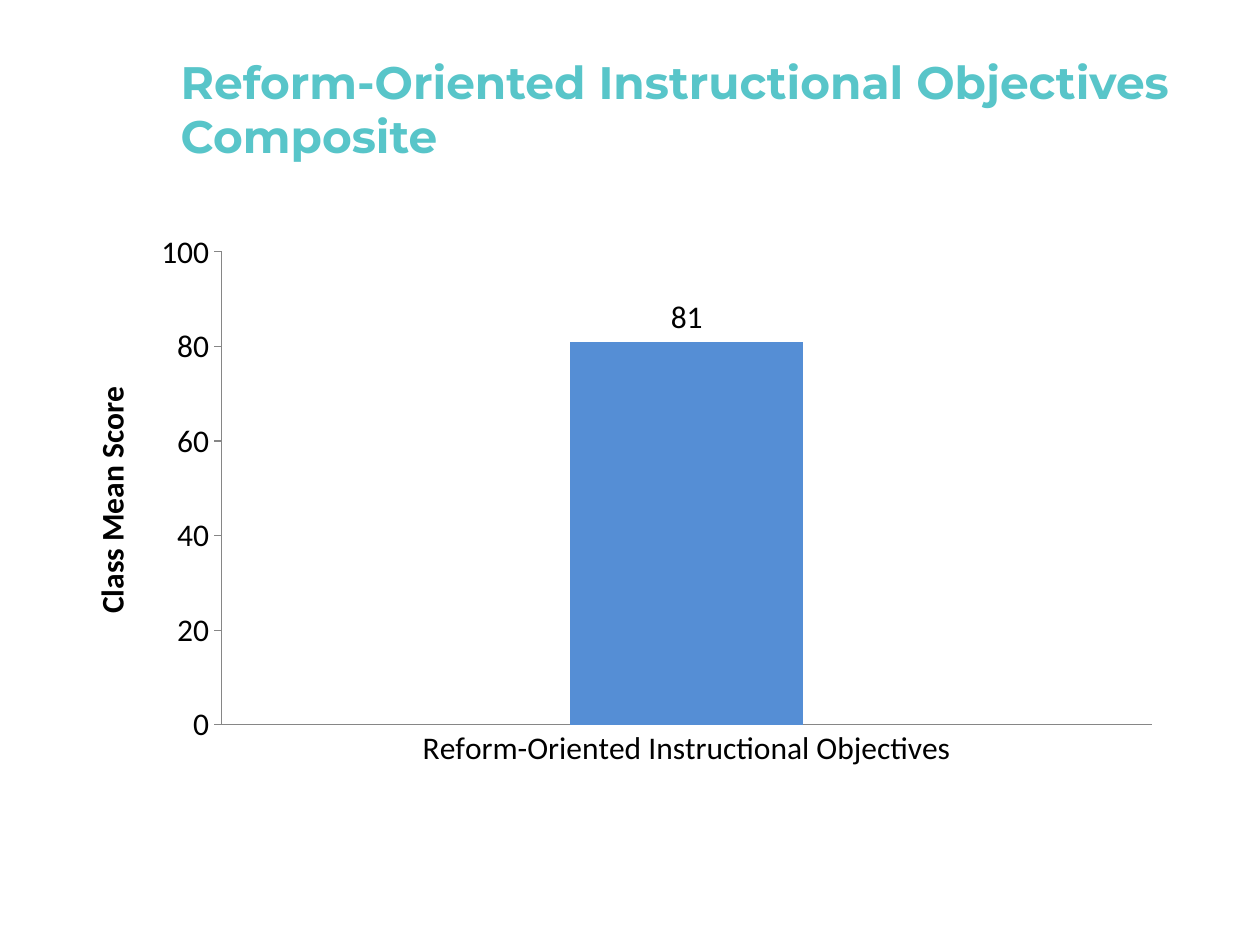
from lxml import etree
from pptx import Presentation
from pptx.chart.data import CategoryChartData
from pptx.dml.color import RGBColor
from pptx.enum import chart as ch, text as tx
from pptx.oxml import ns
from pptx.util import Pt


def paint(part, color):
    part.solid()
    part.fore_color.rgb = RGBColor.from_string(color)


def style(font, name, size, color, bold=False):
    font.name, font.size, font.bold = name, Pt(size), bold
    paint(font.fill, color)


def add_title(slide, x, y, w, h):
    title = slide.shapes.title
    title.left, title.top, title.width, title.height = map(Pt, (x, y, w, h))
    frame = title.text_frame
    frame.word_wrap = True
    frame.auto_size = tx.MSO_AUTO_SIZE.NONE
    frame.vertical_anchor = tx.MSO_ANCHOR.MIDDLE
    para = frame.paragraphs[0]
    para.alignment = tx.PP_ALIGN.LEFT
    run = para.add_run()
    run.text = "Reform-Oriented Instructional Objectives Composite"
    style(run.font, "Montserrat", 26, "58C5C9", True)


def set_plot(chart, x, y, w, h):
    area = chart._chartSpace.chart.plotArea
    for old in area.findall(ns.qn("c:layout")):
        area.remove(old)
    layout = etree.Element(ns.qn("c:layout"))
    area.insert(0, layout)
    manual = etree.SubElement(layout, ns.qn("c:manualLayout"))
    parts = {"layoutTarget": "inner", "xMode": "edge", "yMode": "edge",
             "x": x, "y": y, "w": w, "h": h}
    for tag, val in parts.items():
        etree.SubElement(manual, ns.qn("c:" + tag)).set("val", str(val))


def add_chart(slide, x, y, w, h):
    data = CategoryChartData(number_format="0")
    data.categories = ["Reform-Oriented Instructional Objectives"]
    data.add_series("Series 1", [81])
    chart = slide.shapes.add_chart(
        ch.XL_CHART_TYPE.COLUMN_CLUSTERED, *map(Pt, (x, y, w, h)), data).chart
    chart.has_legend = chart.has_title = False
    style(chart.font, "Calibri", 18, "000000")
    set_plot(chart, 0.126, 0.055, 0.852, 0.829)

    plot = chart.plots[0]
    plot.gap_width = 300
    plot.vary_by_categories = False
    bars = plot.series[0]
    paint(bars.format.fill, "558ED5")
    labels = bars.data_labels
    labels.show_value = True
    labels.position = ch.XL_LABEL_POSITION.OUTSIDE_END
    style(labels.font, "Calibri", 18, "000000")

    score, group = chart.value_axis, chart.category_axis
    for axis in (score, group):
        axis.has_major_gridlines = False
        axis.minor_tick_mark = ch.XL_TICK_MARK.NONE
        paint(axis.format.line.fill, "868686")
        axis.format.line.width = Pt(0.75)
        style(axis.tick_labels.font, "Calibri", 18, "000000")
    group.major_tick_mark = ch.XL_TICK_MARK.NONE
    score.major_tick_mark = ch.XL_TICK_MARK.OUTSIDE
    score.minimum_scale, score.maximum_scale, score.major_unit = 0, 100, 20
    run = score.axis_title.text_frame.paragraphs[0].add_run()
    run.text = "Class Mean Score"
    style(run.font, "Calibri", 18, "000000", True)


def main():
    deck = Presentation()
    deck.slide_width, deck.slide_height = Pt(720), Pt(540)
    slide = deck.slides.add_slide(deck.slide_layouts[5])
    paint(slide.background.fill, "FFFFFF")
    add_title(slide, 96, 21.6, 588, 80.6)
    add_chart(slide, 48, 126, 624, 326)
    deck.save("out.pptx")


if __name__ == "__main__":
    main()
